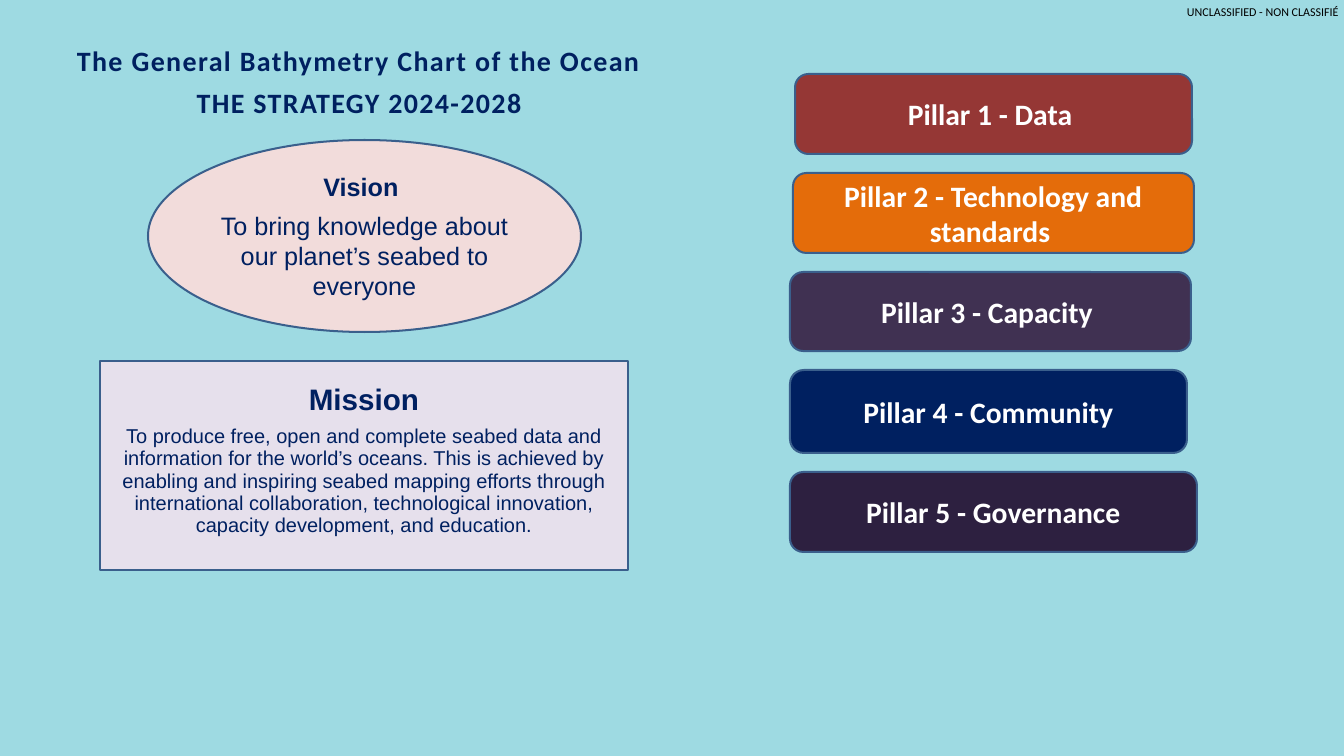
from pptx import Presentation
from pptx.dml.color import RGBColor
from pptx.enum.shapes import MSO_SHAPE
from pptx.enum.text import MSO_ANCHOR, PP_ALIGN
from pptx.util import Pt

PX = 12700
ELLIPSE, RECTANGLE = MSO_SHAPE.OVAL, MSO_SHAPE.RECTANGLE
ROUNDED = MSO_SHAPE.ROUNDED_RECTANGLE
TOP, MIDDLE, BOTTOM = MSO_ANCHOR.TOP, MSO_ANCHOR.MIDDLE, MSO_ANCHOR.BOTTOM
LEFT, CENTER = PP_ALIGN.LEFT, PP_ALIGN.CENTER

SKY = RGBColor(0x9E, 0xDA, 0xE2)
NAVY = RGBColor(0x00, 0x20, 0x60)
BLACK = RGBColor(0x00, 0x00, 0x00)
WHITE = RGBColor(0xFF, 0xFF, 0xFF)
OUTLINE = RGBColor(0x3A, 0x5F, 0x8C)
ROSE = RGBColor(0xF2, 0xDC, 0xDB)
LILAC = RGBColor(0xE6, 0xE0, 0xEC)
BRICK = RGBColor(0x95, 0x37, 0x35)
ORANGE = RGBColor(0xE4, 0x6C, 0x0A)
PURPLE = RGBColor(0x40, 0x31, 0x52)
PLUM = RGBColor(0x2D, 0x20, 0x40)

PILLAR_TOP, PILLAR_GAP = 74, 19
PILLARS = [
    ("Pillar 1 - Data ", 795, 397, 80, BRICK),
    ("Pillar 2 - Technology and standards ", 793, 401, 80, ORANGE),
    ("Pillar 3 - Capacity ", 790, 401, 79, PURPLE),
    ("Pillar 4 - Community", 790, 397, 83, NAVY),
    ("Pillar 5 - Governance", 790, 407, 80, PLUM),
]
MISSION = (
    "To produce free, open and complete seabed data and information for the "
    "world’s oceans. This is achieved by enabling and inspiring seabed mapping "
    "efforts through international collaboration, technological innovation, "
    "capacity development, and education."
)


def px(*lengths):
    return [length * PX for length in lengths]


def add_text(box, text, *, size, color, font="Calibri", bold=False, align=CENTER,
             line_spacing=None, after=0, tracking=None, new_para=False):
    frame = box.text_frame
    para = frame.add_paragraph() if new_para else frame.paragraphs[0]
    para.alignment = align
    para.line_spacing = line_spacing
    para.space_after = Pt(after)
    for number, line in enumerate(text.split("\n")):
        if number:
            para.add_line_break()
        span = para.add_run()
        span.text = line
        span.font.name = font
        span.font.size = Pt(size)
        span.font.bold = bold
        span.font.color.rgb = color
        if tracking:
            span.font._element.set("spc", str(tracking))


def add_box(page, left, top, width, height, anchor, wrap=True):
    box = page.shapes.add_textbox(*px(left, top, width, height))
    box.text_frame.word_wrap = wrap
    box.text_frame.vertical_anchor = anchor
    return box


def add_panel(page, kind, left, top, width, height, fill):
    panel = page.shapes.add_shape(kind, *px(left, top, width, height))
    panel.shadow.inherit = False
    panel.fill.solid()
    panel.fill.fore_color.rgb = fill
    panel.line.color.rgb = OUTLINE
    panel.line.width = Pt(2)
    panel.text_frame.word_wrap = True
    panel.text_frame.vertical_anchor = MIDDLE
    return panel


def add_marking(page):
    box = add_box(page, 1187, 5, 155, 14, TOP, wrap=False)
    frame = box.text_frame
    frame.margin_left = frame.margin_top = frame.margin_right = frame.margin_bottom = 0
    add_text(box, "UNCLASSIFIED - NON CLASSIFIÉ", size=12, color=BLACK, align=LEFT)


def add_title(page):
    box = add_box(page, 55, 50, 616, 73, BOTTOM)
    add_text(box, "The General Bathymetry Chart of the Ocean \nTHE STRATEGY 2024-2028 ",
             size=28, color=NAVY, bold=True, line_spacing=1.25, tracking=140)


def add_vision(page):
    panel = add_panel(page, ELLIPSE, 148, 140, 433, 192, ROSE)
    add_text(panel, "Vision ", size=25.2, color=NAVY, font="Arial", bold=True, after=8.4)
    add_text(panel, "To bring knowledge about our planet’s seabed to everyone",
             size=25.2, color=NAVY, font="Arial", new_para=True)


def add_mission(page):
    panel = add_panel(page, RECTANGLE, 100, 361, 528, 209, LILAC)
    add_text(panel, "Mission", size=29.6, color=NAVY, font="Arial", bold=True,
             line_spacing=Pt(22.4), after=8.4)
    add_text(panel, MISSION, size=20, color=NAVY, font="Arial",
             line_spacing=Pt(22.4), after=14, new_para=True)


def add_pillars(page):
    top = PILLAR_TOP
    for name, left, width, height, fill in PILLARS:
        panel = add_panel(page, ROUNDED, left, top, width, height, fill)
        add_text(panel, name, size=29.6, color=WHITE, bold=True)
        top += height + PILLAR_GAP


def main():
    deck = Presentation()
    deck.slide_width, deck.slide_height = px(1344, 756)
    page = deck.slides.add_slide(deck.slide_layouts[6])
    page.background.fill.solid()
    page.background.fill.fore_color.rgb = SKY
    add_marking(page)
    add_title(page)
    add_vision(page)
    add_pillars(page)
    add_mission(page)
    deck.save("out.pptx")


if __name__ == "__main__":
    main()
